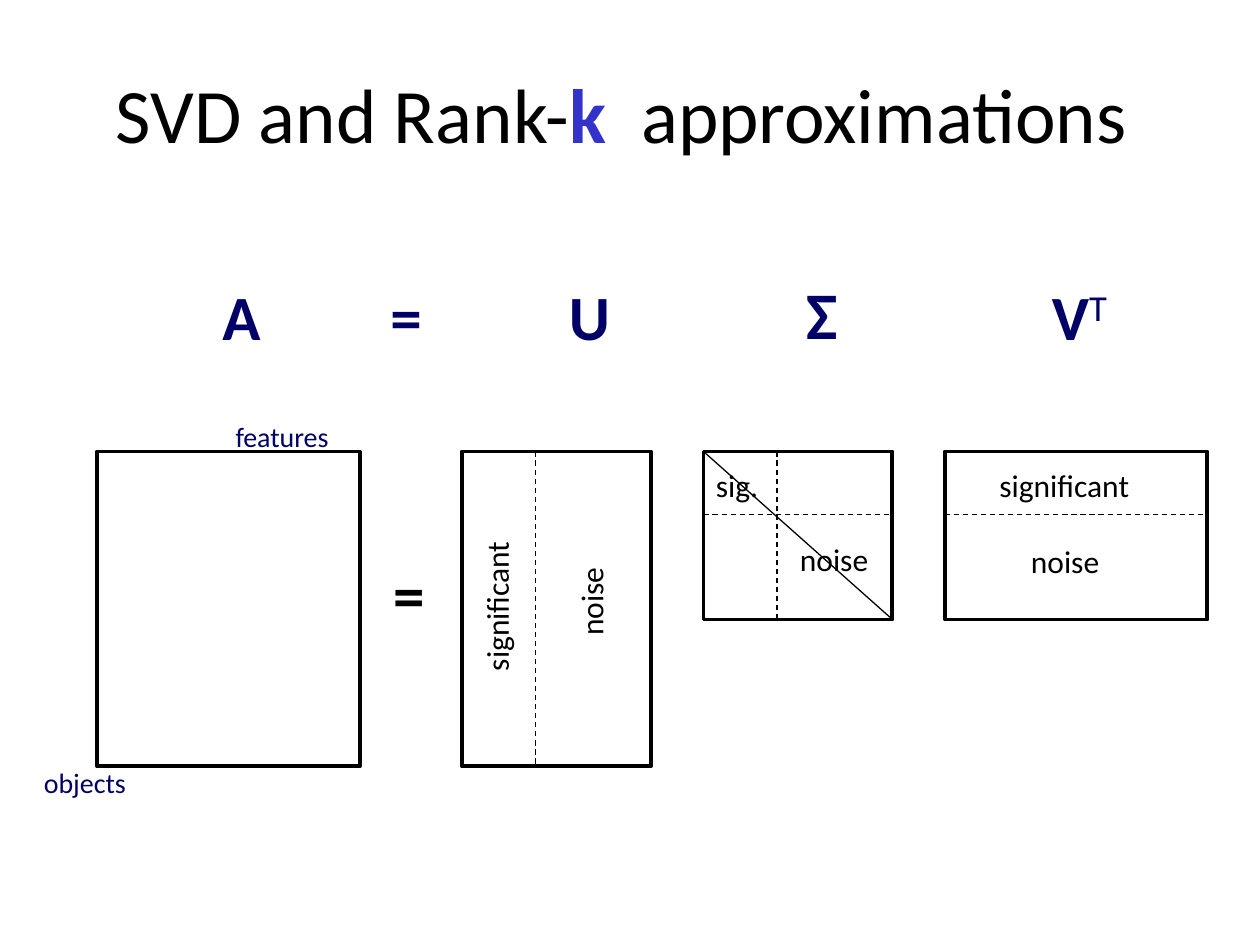
from lxml import etree
from pptx import Presentation
from pptx.dml.color import RGBColor
from pptx.enum.dml import MSO_LINE
from pptx.enum.shapes import MSO_CONNECTOR, MSO_SHAPE
from pptx.enum.text import MSO_ANCHOR, MSO_AUTO_SIZE, PP_ALIGN
from pptx.oxml.ns import qn
from pptx.util import Pt

RECT = MSO_SHAPE.RECTANGLE
STRAIGHT = MSO_CONNECTOR.STRAIGHT
DASH = MSO_LINE.DASH
MIDDLE = MSO_ANCHOR.MIDDLE
CENTER = PP_ALIGN.CENTER
GROW, FIXED = MSO_AUTO_SIZE.SHAPE_TO_FIT_TEXT, MSO_AUTO_SIZE.NONE

BLACK, NAVY, BLUE = "000000", "000066", "3333CC"


def rgb(value):
    return RGBColor.from_string(value)


class SlideBuilder:
    font = "Calibri"
    spacing = 0.98

    def __init__(self, slide):
        self.slide = slide

    def matrix(self, x, y, w, h):
        sp = self.slide.shapes.add_shape(RECT, Pt(x), Pt(y), Pt(w), Pt(h))
        sp.shadow.inherit = False
        sp.fill.background()
        sp.line.color.rgb = rgb(BLACK)
        sp.line.width = Pt(2.25)

    def line(self, x1, y1, x2, y2, dash=DASH):
        cx = self.slide.shapes.add_connector(
            STRAIGHT, Pt(x1), Pt(y1), Pt(x2), Pt(y2))
        cx.line.color.rgb = rgb(BLACK)
        cx.line.width = Pt(0.75)
        cx.line.dash_style = dash
        etree.SubElement(cx._element.spPr, qn("a:effectLst"))

    def run(self, p, text, size, color, bold=False):
        r = p.add_run()
        r.text = text
        r.font.name = self.font
        r.font.size = Pt(size)
        r.font.bold = bold
        r.font.color.rgb = rgb(color)
        return r

    def box(self, x, y, w, h, wrap=False):
        """Add an empty text box and return its shape and first paragraph."""
        sp = self.slide.shapes.add_textbox(Pt(x), Pt(y), Pt(w), Pt(h))
        tf = sp.text_frame
        tf.word_wrap = wrap
        tf.auto_size = FIXED if wrap else GROW
        p = tf.paragraphs[0]
        p.line_spacing = self.spacing
        return sp, p

    def label(self, text, x, y, w, h=28.8, size=18, color=BLACK,
              bold=False, rotation=0):
        sp, p = self.box(x, y, w, h)
        sp.rotation = rotation
        self.run(p, text, size, color, bold)
        return p

    def symbol(self, text, x, y, w, h=50.4, size=36, color=NAVY):
        return self.label(text, x, y, w, h, size, color, bold=True)

    def superscript(self, p, text, size, color):
        r = self.run(p, text, size, color)
        r._r.get_or_add_rPr().set("baseline", "30000")

    def title(self, parts, x, y, w, h, size=44):
        sp, p = self.box(x, y, w, h, wrap=True)
        sp.text_frame.vertical_anchor = MIDDLE
        p.alignment = CENTER
        for text, color, bold in parts:
            self.run(p, text, size, color, bold)


def main():
    prs = Presentation()
    prs.slide_width, prs.slide_height = Pt(720), Pt(540)
    s = SlideBuilder(prs.slides.add_slide(prs.slide_layouts[6]))

    top, tall, short = 258, 180, 96
    a_x, u_x, sigma_x, v_x = 55.5, 264, 402, 540
    wide, narrow = 150, 108
    u_split, sigma_split, row_split = 306, 444, 294

    s.matrix(a_x, top, wide, tall)
    s.matrix(u_x, top, narrow, tall)
    s.matrix(v_x, top, wide, short)
    s.matrix(sigma_x, top, narrow, short)

    symbol_y = 157
    s.symbol("A", 120, symbol_y, 41)
    v = s.symbol("V", 594, symbol_y, 55.4)
    s.superscript(v, "T", 36, NAVY)
    s.symbol("Σ", 453.6, 154.8, 36.7, 52.6, size=38)
    s.symbol("U", 318, symbol_y, 41)
    s.symbol("=", 216, symbol_y, 36.7)
    s.label("objects", 18, 435, 71.3, 26.6, 16, NAVY)
    s.label("features", 127.5, 237, 79.9, 26.6, 16, NAVY)

    s.line(u_split, top, u_split, top + tall)
    s.line(sigma_x, top, sigma_x + narrow, top + short, dash=None)
    s.line(sigma_split, top, sigma_split, top + short)
    for x, width in ((sigma_x, narrow), (v_x, wide)):
        s.line(x, row_split, x + width, row_split)

    sig_w, noise_w = 103, 56.9
    s.label("significant", 564, 264, sig_w)
    s.label("noise", 582, 307.5, noise_w)
    s.label("noise", 310.3, 327.6, noise_w, rotation=270)
    s.label("noise", 450, 306, noise_w)
    s.label("significant", 233.3, 324.7, sig_w, rotation=270)
    s.label("sig.", 402, 264, 42.5)
    s.symbol("=", 217.5, 316, 36.7, color=BLACK)

    s.title((("SVD and Rank-", BLACK, False),
             ("k  ", BLUE, True),
             ("approximations ", BLACK, False)), 36, 10, 648, 113)

    prs.save("out.pptx")


if __name__ == "__main__":
    main()
